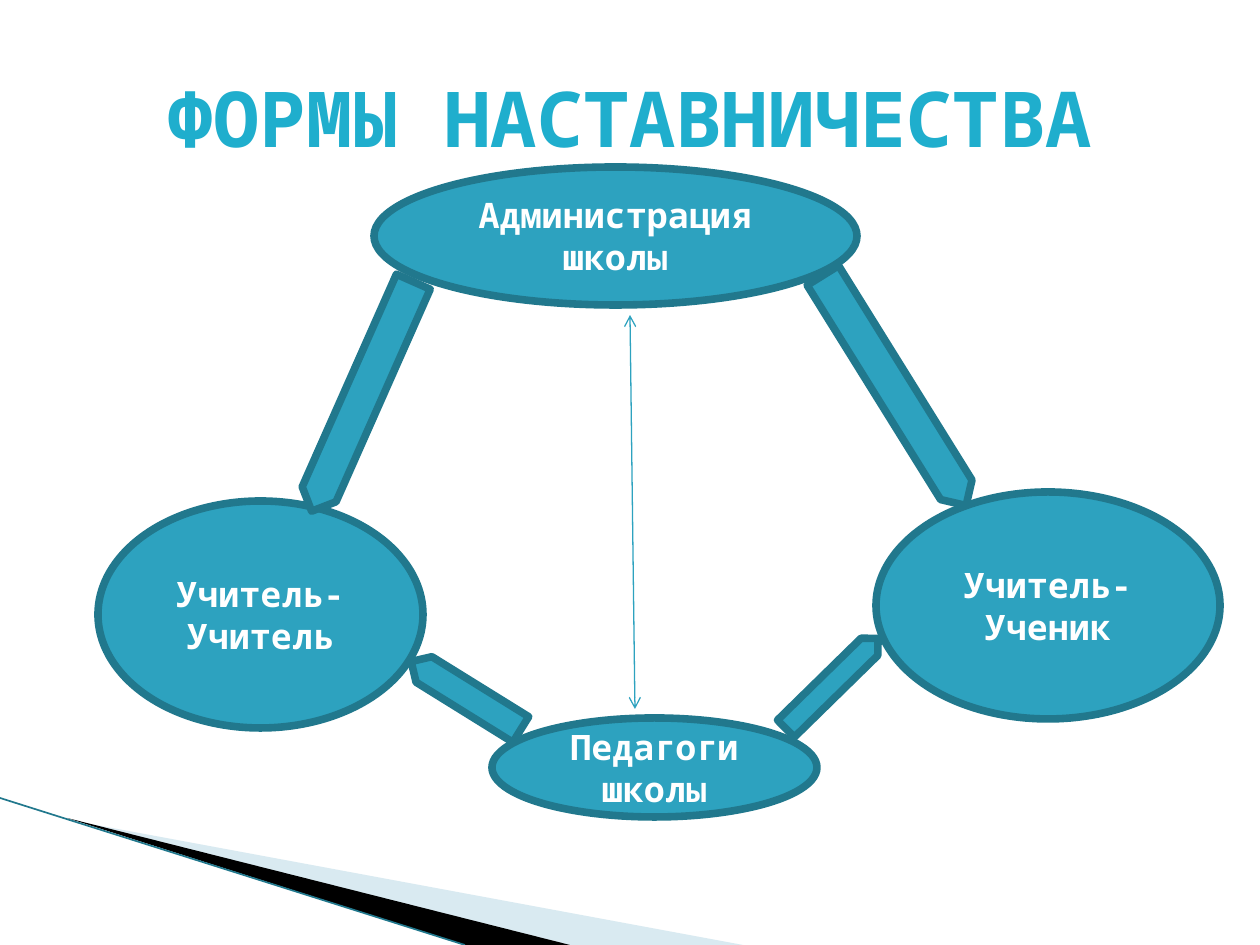
from typing import NamedTuple
from lxml.etree import SubElement as Sub
from pptx import Presentation
from pptx.dml.color import RGBColor as Rgb
from pptx.enum.shapes import MSO_CONNECTOR as Conn, MSO_SHAPE as Kind
from pptx.enum.text import MSO_ANCHOR as Anchor, PP_ALIGN as Align
from pptx.oxml.ns import qn
from pptx.util import Pt

PX = 914400 / 126
FONT = "Noto Sans Mono"
TEAL = Rgb(0x2D, 0xA2, 0xBF)
DARK = Rgb(0x21, 0x78, 0x8D)
SKY = Rgb(0x1F, 0xAE, 0xCD)
PALE = Rgb(0xA0, 0xCB, 0xDC)
BLACK = Rgb(0, 0, 0)
WHITE = Rgb(255, 255, 255)


class Box(NamedTuple):
    left: int
    top: int
    width: int
    height: int


class Role(NamedTuple):
    text: str
    box: Box


class Arrow(NamedTuple):
    box: Box
    turn: float


class Wedge(NamedTuple):
    points: list[tuple[int, int]]
    color: Rgb
    alpha: int


class Rule(NamedTuple):
    start: tuple[int, int]
    end: tuple[int, int]
    color: Rgb
    width: float
    heads: bool


WEDGES = [
    Wedge([(69, 820), (743, 945), (570, 945)], PALE, 40),
    Wedge([(67, 818), (570, 945), (465, 945)], BLACK, 100),
]
EDGE = Rule((0, 798), (465, 945), DARK, 0.95, False)
LINK = Rule((630, 315), (635, 709), TEAL, 0.75, True)
TITLE = Role("ФОРМЫ НАСТАВНИЧЕСТВА", Box(63, 38, 1134, 158))
ROLES = [
    Role("Учитель-Учитель", Box(98, 501, 325, 227)),
    Role("Учитель-Ученик", Box(876, 492, 344, 227)),
    Role("Администрация школы", Box(374, 167, 483, 138)),
    Role("Педагоги школы", Box(492, 718, 325, 99)),
]
ARROWS = [
    Arrow(Box(876, 255, 37, 271), 328.1),
    Arrow(Box(344, 271, 37, 251), 23.9),
    Arrow(Box(820, 619, 24, 129), 225.6),
    Arrow(Box(451, 631, 30, 129), 121.8),
]


def emu(*px: int) -> list[int]:
    return [round(n * PX) for n in px]


def write(shape, text: str, size: int, color: Rgb) -> None:
    frame = shape.text_frame
    frame.word_wrap = True
    frame.vertical_anchor = Anchor.MIDDLE
    para = frame.paragraphs[0]
    para.alignment = Align.CENTER
    run = para.add_run()
    run.text = text
    font = run.font
    font.name, font.size, font.bold = FONT, Pt(size), True
    font.color.rgb = color


def solid(shapes, kind: Kind, box: Box):
    shape = shapes.add_shape(kind, *emu(*box))
    shape.shadow.inherit = False
    shape.fill.solid()
    shape.fill.fore_color.rgb = TEAL
    shape.line.color.rgb = DARK
    shape.line.width = Pt(4.33)
    return shape


def draw_wedge(shapes, wedge: Wedge) -> None:
    first, *rest = wedge.points
    path = shapes.build_freeform(*first, scale=PX)
    path.add_line_segments(rest)
    shape = path.convert_to_shape()
    shape.shadow.inherit = False
    shape.line.fill.background()
    shape.fill.solid()
    shape.fill.fore_color.rgb = wedge.color
    if wedge.alpha < 100:
        color = shape._element.spPr.find(".//" + qn("a:srgbClr"))
        Sub(color, qn("a:alpha"), val=str(wedge.alpha * 1000))


def draw_rule(shapes, rule: Rule) -> None:
    line = shapes.add_connector(Conn.STRAIGHT, *emu(*rule.start, *rule.end))
    line.line.color.rgb = rule.color
    line.line.width = Pt(rule.width)
    if rule.heads:
        for end in ("a:headEnd", "a:tailEnd"):
            Sub(line.line._get_or_add_ln(), qn(end), type="arrow")
    Sub(line._element.spPr, qn("a:effectLst"))


def draw_title(shapes, role: Role) -> None:
    write(shapes.add_textbox(*emu(*role.box)), role.text, 44, SKY)


def draw_role(shapes, role: Role) -> None:
    write(solid(shapes, Kind.OVAL, role.box), role.text, 20, WHITE)


def draw_arrow(shapes, arrow: Arrow) -> None:
    shape = solid(shapes, Kind.DOWN_ARROW, arrow.box)
    shape.adjustments[0] = 1
    shape.adjustments[1] = 0.5
    shape.rotation = arrow.turn


def main() -> None:
    deck = Presentation()
    deck.slide_width, deck.slide_height = emu(1260, 945)
    shapes = deck.slides.add_slide(deck.slide_layouts[6]).shapes
    for wedge in WEDGES:
        draw_wedge(shapes, wedge)
    draw_rule(shapes, EDGE)
    draw_title(shapes, TITLE)
    for role in ROLES:
        draw_role(shapes, role)
    for arrow in ARROWS:
        draw_arrow(shapes, arrow)
    draw_rule(shapes, LINK)
    deck.save("out.pptx")


if __name__ == "__main__":
    main()
